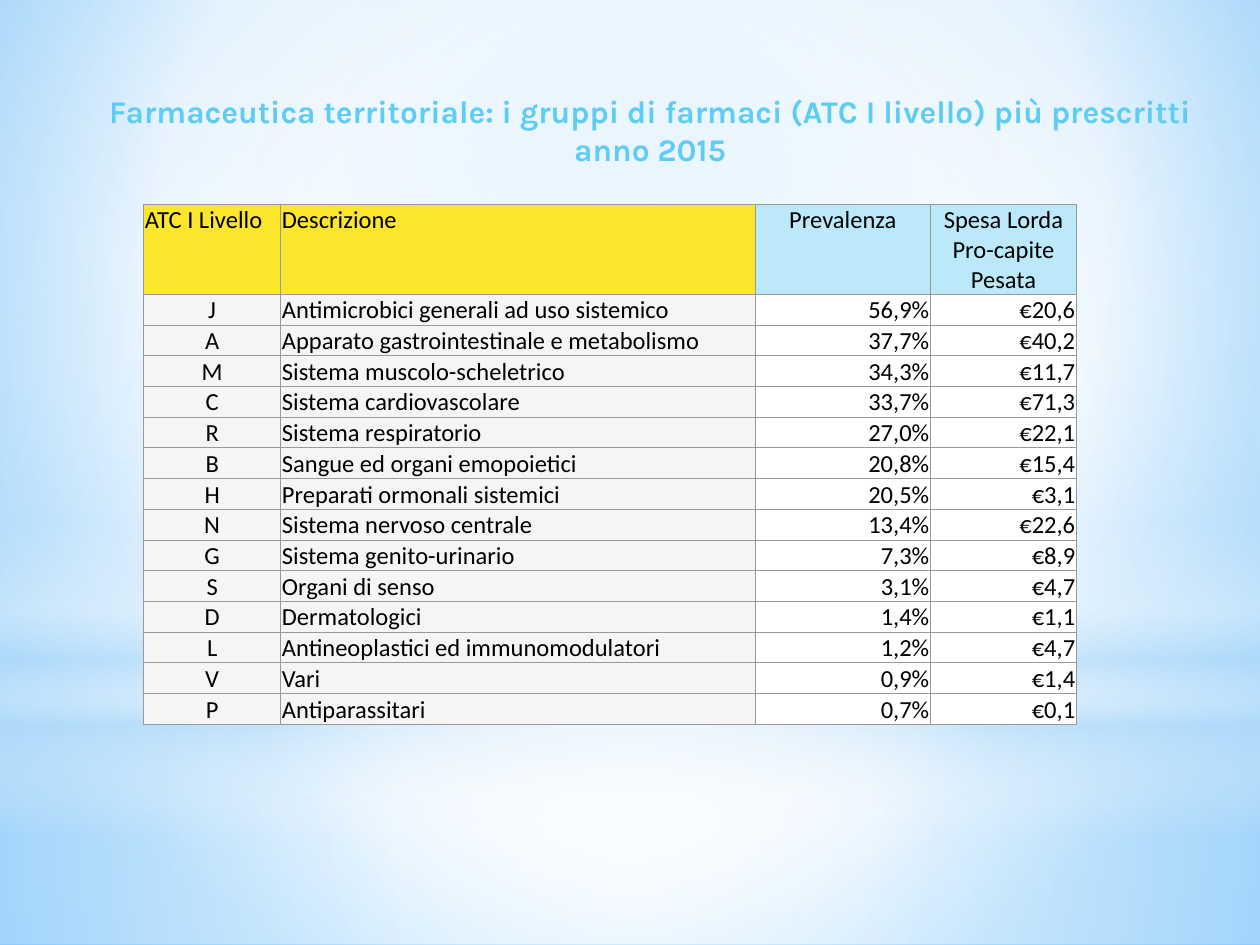
from pptx import Presentation, util as u
from pptx.dml.color import RGBColor
from pptx.enum import shapes, text
from pptx.oxml import parse_xml
from pptx.oxml.ns import nsdecls, qn

LEFT, CENTER, RIGHT = text.PP_ALIGN.LEFT, text.PP_ALIGN.CENTER, text.PP_ALIGN.RIGHT
MIDDLE_OUT = (50, 50, 50, 50)
HEADERS = ["ATC I Livello", "Descrizione", "Prevalenza", "Spesa Lorda Pro-capite Pesata"]
GROUPS = [
    ("J", "Antimicrobici generali ad uso sistemico", "56,9%", "€20,6"),
    ("A", "Apparato gastrointestinale e metabolismo", "37,7%", "€40,2"),
    ("M", "Sistema muscolo-scheletrico", "34,3%", "€11,7"),
    ("C", "Sistema cardiovascolare", "33,7%", "€71,3"),
    ("R", "Sistema respiratorio", "27,0%", "€22,1"),
    ("B", "Sangue ed organi emopoietici", "20,8%", "€15,4"),
    ("H", "Preparati ormonali sistemici", "20,5%", "€3,1"),
    ("N", "Sistema nervoso centrale", "13,4%", "€22,6"),
    ("G", "Sistema genito-urinario", "7,3%", "€8,9"),
    ("S", "Organi di senso", "3,1%", "€4,7"),
    ("D", "Dermatologici", "1,4%", "€1,1"),
    ("L", "Antineoplastici ed immunomodulatori", "1,2%", "€4,7"),
    ("V", "Vari", "0,9%", "€1,4"),
    ("P", "Antiparassitari", "0,7%", "€0,1"),
]


def color(value):
    """Turn a hex string into a colour."""
    return RGBColor.from_string(value)


def set_gradient(fill, props, stops, center=None):
    """Fill with (position, colour, opacity) stops, circular around center or downward."""
    fill.solid()
    gs = "".join(
        f'<a:gs pos="{pos * 1000}"><a:srgbClr val="{rgb}">'
        f'<a:alpha val="{opacity * 1000}"/></a:srgbClr></a:gs>'
        for pos, rgb, opacity in stops)
    if center:
        sides = " ".join(f'{k}="{v * 1000}"' for k, v in zip("ltrb", center))
        shade = f'<a:path path="circle"><a:fillToRect {sides}/></a:path>'
    else:
        shade = '<a:lin ang="5400000" scaled="0"/>'
    grad = parse_xml(f'<a:gradFill {nsdecls("a")} rotWithShape="1">'
                     f'<a:gsLst>{gs}</a:gsLst>{shade}</a:gradFill>')
    props.replace(props.find(qn("a:solidFill")), grad)


def add_glow(s, kind, top, height, stops, center=None):
    """Add a full-width gradient shape without outline."""
    sp = s.shapes.add_shape(kind, 0, u.Pt(top), u.Pt(720), u.Pt(height))
    sp.shadow.inherit = False
    sp.line.fill.background()
    set_gradient(sp.fill, sp._element.spPr, stops, center)


def write(p, content, size=14, font="Calibri", rgb="000000", bold=False, align=LEFT):
    """Write one formatted run into a paragraph."""
    p.alignment = align
    r = p.add_run()
    r.text = content
    r.font.size, r.font.name, r.font.bold = u.Pt(size), font, bold
    r.font.color.rgb = color(rgb)


def add_title(s, lines):
    """Add the centred title."""
    box = s.shapes.add_textbox(*map(u.Pt, (48.24, 48.96, 646.56, 72.72)))
    tf = box.text_frame
    tf.word_wrap = True
    for i, line in enumerate(lines):
        p = tf.add_paragraph() if i else tf.paragraphs[0]
        write(p, line, size=18, font="Karla", rgb="5ECCF3", bold=True, align=CENTER)


def format_cell(cell, content, fill, align, anchor):
    """Write a table cell with its borders, fill and margins."""
    tc_pr = cell._tc.get_or_add_tcPr()
    for side in "LRTB":
        tc_pr.append(parse_xml(
            f'<a:ln{side} {nsdecls("a")} w="{u.Pt(0.5)}"><a:solidFill>'
            f'<a:srgbClr val="999999"/></a:solidFill></a:ln{side}>'))
    cell.fill.solid()
    cell.fill.fore_color.rgb = color(fill)
    cell.margin_left = cell.margin_right = cell.margin_top = u.Pt(0.72)
    cell.margin_bottom = 0
    cell.vertical_anchor = anchor
    write(cell.text_frame.paragraphs[0], content, align=align)


def add_groups_table(s):
    """Add the table of drug groups."""
    widths, head, row = (78.3, 271.2, 100.2, 83.4), 51.4, 17.55
    frame = s.shapes.add_table(len(GROUPS) + 1, len(widths), u.Pt(82.1), u.Pt(116.8),
                               u.Pt(sum(widths)), u.Pt(head + row * len(GROUPS)))
    table = frame.table
    table.first_row = table.horz_banding = False
    for column, width in zip(table.columns, widths):
        column.width = u.Pt(width)
    head_style = (("FCE52D", "FCE52D", "BCE9F9", "BCE9F9"),
                  (LEFT, LEFT, CENTER, CENTER), text.MSO_ANCHOR.TOP)
    body_style = (("F5F5F5", "F5F5F5", "FFFFFF", "FFFFFF"),
                  (CENTER, LEFT, RIGHT, RIGHT), text.MSO_ANCHOR.MIDDLE)
    for i, values in enumerate([HEADERS, *GROUPS]):
        table.rows[i].height = u.Pt(row if i else head)
        fills, aligns, anchor = body_style if i else head_style
        for j, value in enumerate(values):
            format_cell(table.cell(i, j), value, fills[j], aligns[j], anchor)


def add_backdrop(s):
    """Add the background and its soft light effects."""
    rect, ellipse = shapes.MSO_SHAPE.RECTANGLE, shapes.MSO_SHAPE.OVAL
    fill = s.background.fill
    fill.solid()
    set_gradient(fill, s._element.cSld.bg.bgPr,
                 [(0, "9ED5FF", 100), (60, "FFFFFF", 100), (100, "5BB9FF", 100)],
                 (20, 10, 20, 60))
    add_glow(s, rect, 402, 138,
             [(0, "FFFFFF", 91), (37, "FFFFFF", 76), (100, "B4DCFA", 79)], MIDDLE_OUT)
    add_glow(s, rect, 0, 402,
             [(0, "FFFFFF", 89), (48, "FFFFFF", 62), (100, "B4DCFA", 79)], MIDDLE_OUT)
    add_glow(s, rect, 296.6, 180,
             [(0, "FFFFFF", 0), (29, "FFFFFF", 30), (45, "B4DCFA", 40),
              (55, "FFFFFF", 26), (65, "B4DCFA", 60), (100, "FFFFFF", 0)])
    add_glow(s, ellipse, 126, 402, [(0, "FFFFFF", 100), (56, "FFFFFF", 0)], MIDDLE_OUT)


def main():
    """Build and save the slide."""
    prs = Presentation()
    prs.slide_width, prs.slide_height = u.Pt(720), u.Pt(540)
    s = prs.slides.add_slide(prs.slide_layouts[6])
    add_backdrop(s)
    add_title(s, ["Farmaceutica territoriale: i gruppi di farmaci (ATC I livello) più prescritti",
                  "anno 2015"])
    add_groups_table(s)
    prs.save("out.pptx")


if __name__ == "__main__":
    main()
